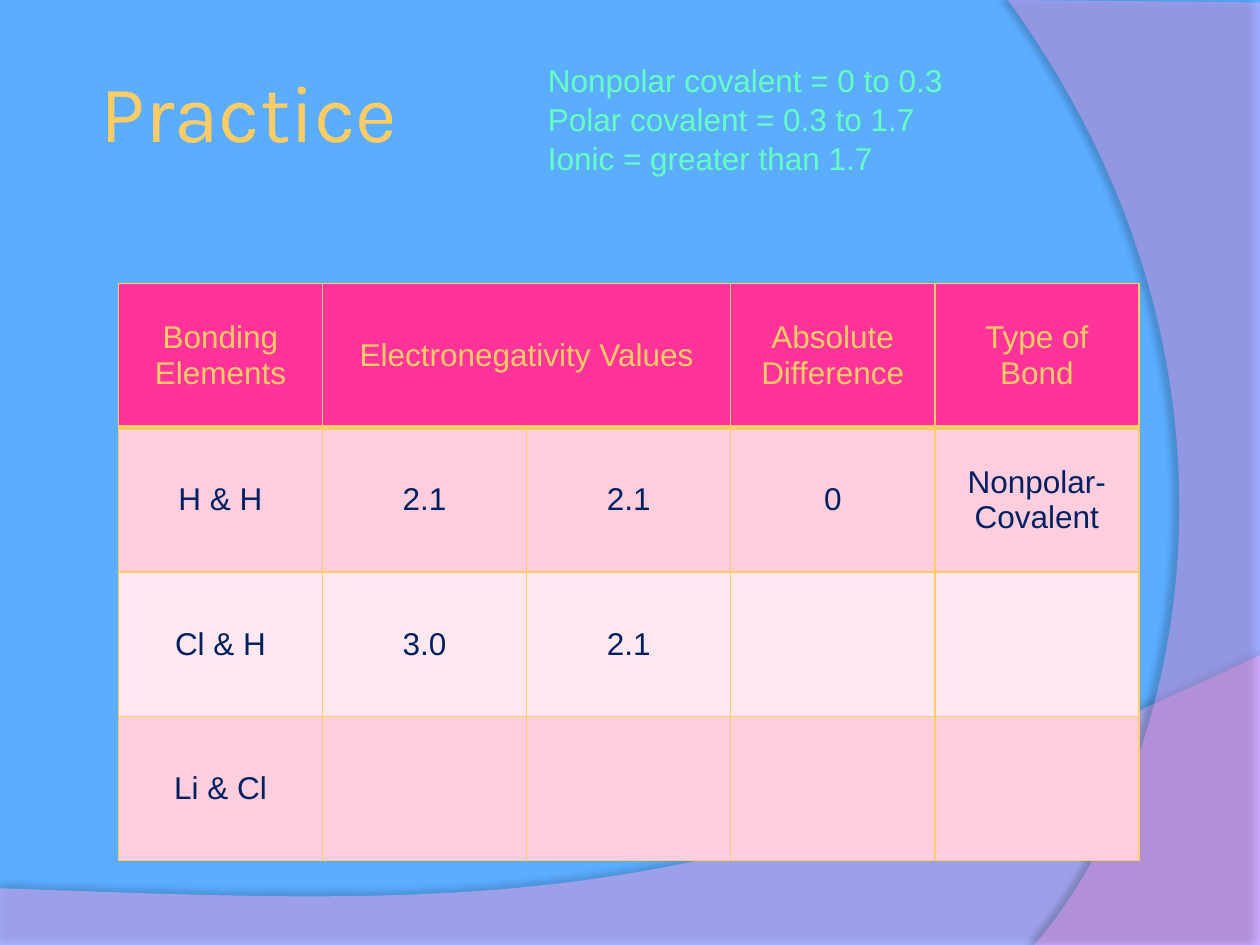
from lxml import etree
from pptx import Presentation
from pptx.dml.color import RGBColor
from pptx.enum.text import MSO_ANCHOR, PP_ALIGN
from pptx.oxml.ns import qn
from pptx.util import Inches, Pt

MIDDLE = MSO_ANCHOR.MIDDLE
CENTER = PP_ALIGN.CENTER
GOLD, PINK, NAVY, MINT = "FFCC66", "FF3399", "002060", "66FFC2"
BANDS = ("FFCEDE", "FFE8EF")
CURVE_STEPS = 48

ROWS = [
    ["Bonding Elements", "Electronegativity Values", "", "Absolute Difference", "Type of Bond"],
    ["H & H", "2.1", "2.1", "0", "Nonpolar- Covalent"],
    ["Cl & H", "3.0", "2.1", "", ""],
    ["Li & Cl", "", "", "", ""],
]
RULES = ["Nonpolar covalent = 0 to 0.3", "Polar covalent = 0.3 to 1.7", "Ionic = greater than 1.7"]


def rgb(value):
    return RGBColor.from_string(value)


def add_color(parent, color, alpha=100):
    clr = etree.SubElement(parent, qn("a:srgbClr"), val=color)
    etree.SubElement(clr, qn("a:alpha"), val=str(alpha * 1000))


def format_text(p, size, font, color):
    for r in p.runs:
        r.font.size = Pt(size)
        r.font.name = font
        r.font.color.rgb = rgb(color)


def bezier(*points):
    curve = []
    for step in range(CURVE_STEPS + 1):
        t = step / CURVE_STEPS
        weights = ((1 - t) ** 3, 3 * t * (1 - t) ** 2, 3 * t ** 2 * (1 - t), t ** 3)
        curve.append(tuple(sum(w * pt[axis] for w, pt in zip(weights, points)) for axis in (0, 1)))
    return curve


def add_wave(slide, left, top, points, color, alpha, shadow_alpha, distance, angle):
    scaled = [(Inches(left + x), Inches(top + y)) for x, y in points]
    builder = slide.shapes.build_freeform(*scaled[0], scale=1.0)
    builder.add_line_segments(scaled[1:], close=True)
    sp = builder.convert_to_shape()
    sp.line.fill.background()
    sp.fill.solid()
    sp.fill.fore_color.rgb = rgb(color)
    sp.shadow.inherit = False
    props = sp._element.spPr
    clr = props.find(qn("a:solidFill")).find(qn("a:srgbClr"))
    etree.SubElement(clr, qn("a:alpha"), val=str(alpha * 1000))
    shadow = etree.SubElement(
        props.find(qn("a:effectLst")), qn("a:outerShdw"),
        blurRad=str(Pt(4)), dist=str(Pt(distance)), dir=str(angle * 60000),
        algn="ctr", rotWithShape="0")
    add_color(shadow, "000000", shadow_alpha)


def add_background(slide):
    fill = slide.background.fill
    fill.solid()
    fill.fore_color.rgb = rgb("5BADFF")
    bottom = [(0, 2.31), (10, 2.31)] + bezier((10, 0), (5.59, 2.09), (3.91, 1.99), (0, 1.85))
    add_wave(slide, 0, 5.2, bottom, "FFB4FF", 45, 35, 3.5, 270)
    side = [(2, 0.02), (2, 7.5)] + bezier((0.21, 7.5), (1.35, 6.19), (2.18, 3), (0, 0))
    add_wave(slide, 8, 0, side, "FFA7FF", 40, 45, 4, 180)


def add_text(slide, left, top, width, height, lines, size, font, color):
    sp = slide.shapes.add_textbox(Inches(left), Inches(top), Inches(width), Inches(height))
    tf = sp.text_frame
    tf.word_wrap = True
    tf.text = "\n".join(lines)
    for p in tf.paragraphs:
        format_text(p, size, font, color)
    return tf


def add_title(slide, left, top, width, height):
    tf = add_text(slide, left, top, width, height, ["Practice"], 46, "Karla", GOLD)
    tf.vertical_anchor = MIDDLE
    tf.margin_left = tf.margin_right = Inches(0.05)


def add_rules(slide, left, top, width, height):
    tf = add_text(slide, left, top, width, height, RULES, 18, "Arial", MINT)
    for p in tf.paragraphs:
        p.line_spacing = 1.04


def set_borders(cell, bottom):
    props = cell._tc.get_or_add_tcPr()
    for side, width in (("L", 1), ("R", 1), ("T", 1), ("B", bottom)):
        ln = etree.SubElement(props, qn(f"a:ln{side}"), w=str(Pt(width)))
        add_color(etree.SubElement(ln, qn("a:solidFill")), GOLD)


def add_bond_table(slide, left, top, width, height):
    frame = slide.shapes.add_table(
        len(ROWS), len(ROWS[0]), Inches(left), Inches(top), Inches(width), Inches(height))
    table = frame.table
    for i, row in enumerate(ROWS):
        header = i == 0
        for j, text in enumerate(row):
            cell = table.cell(i, j)
            set_borders(cell, 3 if header else 1)
            cell.fill.solid()
            cell.fill.fore_color.rgb = rgb(PINK if header else BANDS[(i - 1) % 2])
            cell.vertical_anchor = MIDDLE
            cell.text = text
            p = cell.text_frame.paragraphs[0]
            p.alignment = CENTER
            format_text(p, 18, "Arial", GOLD if header else NAVY)
    table.cell(0, 1).merge(table.cell(0, 2))


def main():
    prs = Presentation()
    prs.slide_width = Inches(10)
    prs.slide_height = Inches(7.5)
    slide = prs.slides.add_slide(prs.slide_layouts[6])
    add_background(slide)
    add_title(slide, 0.75, 0.25, 8.5, 1.25)
    add_bond_table(slide, 0.94, 2.25, 8.1, 4.58)
    add_rules(slide, 4.25, 0.42, 5.42, 1.31)
    prs.save("out.pptx")


if __name__ == "__main__":
    main()
